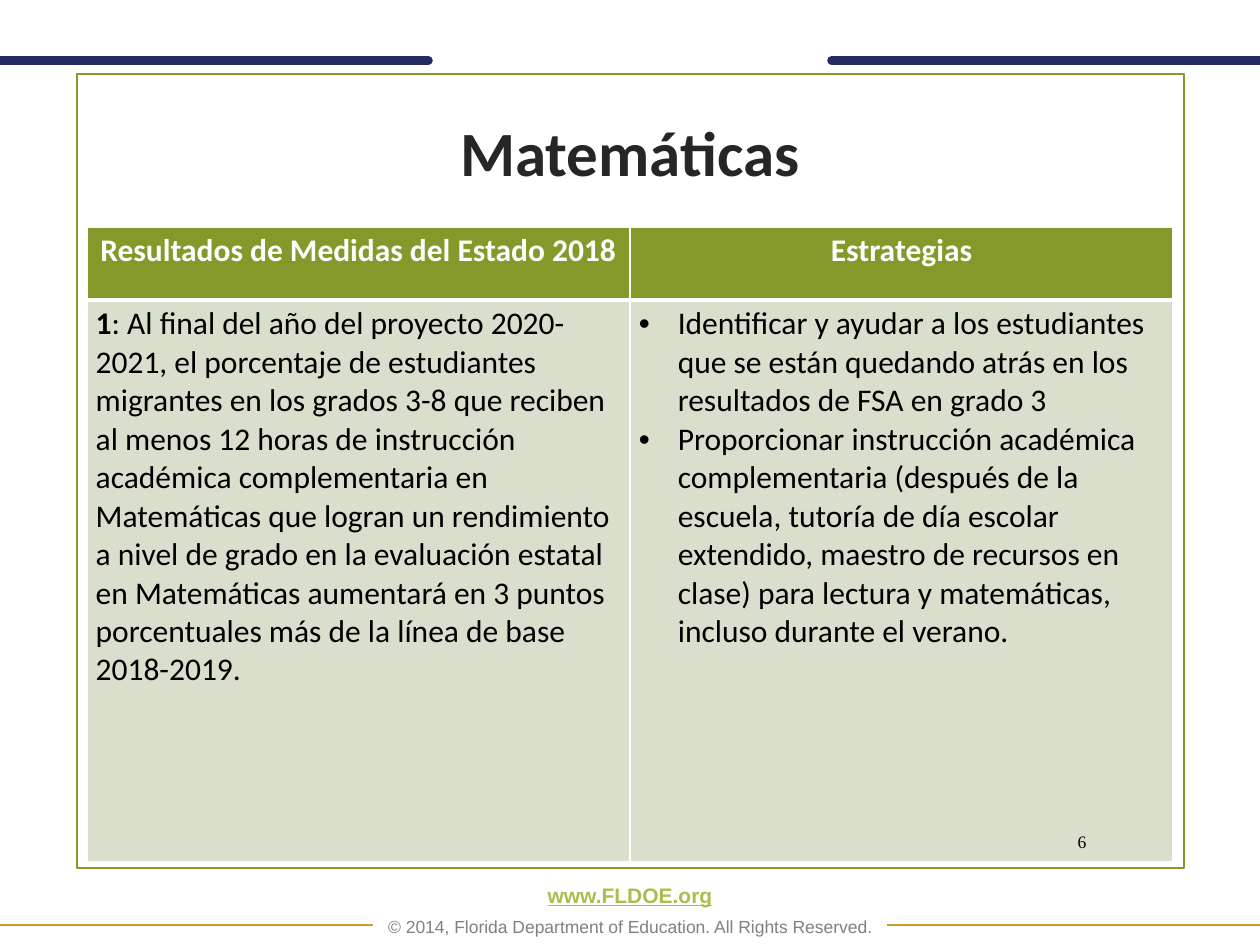
from lxml.etree import SubElement
from pptx import Presentation
from pptx.dml.color import RGBColor
from pptx.enum.shapes import MSO_CONNECTOR, MSO_SHAPE
from pptx.enum.text import MSO_ANCHOR, PP_ALIGN
from pptx.oxml.ns import qn
from pptx.util import Inches, Pt

COLORS = {
    "green": "83992A", "link": "A8BF4D", "pale": "D9DECD", "navy": "262A63",
    "gold": "CD9D2C", "gray": "808080", "dark": "262626",
    "black": "000000", "white": "FFFFFF",
}
LEFT, WIDTH = 0.69, 8.62


def rgb(name):
    return RGBColor.from_string(COLORS[name])


def write(p, text, size=18, font="Calibri", color="black", bold=False,
          underline=False, align=None, before=None, spacing=None, bullet=None):
    """Append a formatted run to paragraph p."""
    if bullet:
        pPr = p._p.get_or_add_pPr()
        pPr.set("marL", str(Inches(0.31)))
        pPr.set("indent", str(-Inches(0.31)))
        SubElement(pPr, qn("a:buFont"), typeface="Arial")
        SubElement(pPr, qn("a:buChar"), char=bullet)
    if align is not None:
        p.alignment = align
    if before is not None:
        p.space_before = Pt(before)
    if spacing is not None:
        p.line_spacing = spacing
    r = p.add_run()
    r.text = text
    r.font.size = Pt(size)
    r.font.name = font
    r.font.bold = bold
    r.font.underline = underline
    r.font.color.rgb = rgb(color)


class Deck:
    def __init__(self):
        self.prs = Presentation()
        self.prs.slide_width, self.prs.slide_height = Inches(10), Inches(7.5)
        self.s = self.prs.slides.add_slide(self.prs.slide_layouts[5])

    def title(self, x, y, w, h, text):
        sp = self.s.shapes.title
        sp.left, sp.top, sp.width, sp.height = map(Inches, (x, y, w, h))
        sp.text_frame.vertical_anchor = MSO_ANCHOR.MIDDLE
        write(sp.text_frame.paragraphs[0], text, size=36, color="dark",
              bold=True, align=PP_ALIGN.CENTER)

    def frame(self, x, y, w, h, color, width):
        sp = self.s.shapes.add_shape(MSO_SHAPE.RECTANGLE, *map(Inches, (x, y, w, h)))
        sp.shadow.inherit = False
        sp.fill.background()
        sp.line.color.rgb = rgb(color)
        sp.line.width = Pt(width)

    def rule(self, x1, x2, y, color, width, cap="flat"):
        """Draw a horizontal line."""
        cn = self.s.shapes.add_connector(
            MSO_CONNECTOR.STRAIGHT, *map(Inches, (x1, y, x2, y)))
        cn.line.color.rgb = rgb(color)
        cn.line.width = Pt(width)
        cn.line._ln.set("cap", cap)
        SubElement(cn._element.spPr, qn("a:effectLst"))

    def text(self, x, y, w, h, anchor):
        """Add a text box and return its text frame."""
        tf = self.s.shapes.add_textbox(*map(Inches, (x, y, w, h))).text_frame
        tf.word_wrap = True
        tf.vertical_anchor = anchor
        return tf

    def table(self, x, y, cols, rows):
        shape = self.s.shapes.add_table(
            len(rows), len(cols), *map(Inches, (x, y, sum(cols), sum(rows))))
        tbl = shape.table
        for col, w in zip(tbl.columns, cols):
            col.width = Inches(w)
        for row, h in zip(tbl.rows, rows):
            row.height = Inches(h)
        return tbl

    def cell(self, cell, fill, top=1, bottom=1):
        """Style a table cell and return its text frame."""
        cell.margin_left = cell.margin_right = Inches(0.07)
        cell.margin_top = cell.margin_bottom = Inches(0.04)
        tcPr = cell._tc.get_or_add_tcPr()
        for side, width in zip("LRTB", (1, 1, top, bottom)):
            ln = SubElement(tcPr, qn(f"a:ln{side}"), w=str(Pt(width)))
            solid = SubElement(ln, qn("a:solidFill"))
            SubElement(solid, qn("a:srgbClr"), val=COLORS["white"])
        cell.fill.solid()
        cell.fill.fore_color.rgb = rgb(fill)
        return cell.text_frame


def main():
    d = Deck()
    d.frame(0.61, 0.59, 8.79, 6.3, "green", 1.25)

    tf = d.text(LEFT, 7.06, WIDTH, 0.43, MSO_ANCHOR.BOTTOM)
    write(tf.paragraphs[0], "www.FLDOE.org", size=12, font="Arial", color="link",
          bold=True, underline=True, align=PP_ALIGN.CENTER, spacing=0.9)
    write(tf.add_paragraph(),
          "© 2014, Florida Department of Education. All Rights Reserved.",
          size=10, font="Arial", color="gray", align=PP_ALIGN.CENTER,
          before=6, spacing=0.9)

    for y, length, color, width, cap in ((7.34, 2.96, "gold", 1, "flat"),
                                         (0.48, 3.4, "navy", 5, "rnd")):
        d.rule(0, length, y, color, width, cap)
        d.rule(10 - length, 10, y, color, width, cap)

    d.title(LEFT, 0.93, WIDTH, 0.55, "Matemáticas")

    tbl = d.table(LEFT, 1.8, [WIDTH / 2] * 2, [0.58, 4.46])
    headers = ("Resultados de Medidas del Estado 2018", "Estrategias")
    for i, header in enumerate(headers):
        tf = d.cell(tbl.cell(0, i), "green", bottom=3)
        write(tf.paragraphs[0], header, color="white", bold=True,
              align=PP_ALIGN.CENTER)

    p = d.cell(tbl.cell(1, 0), "pale", top=3).paragraphs[0]
    write(p, "1", bold=True)
    write(p, ": Al final del año del proyecto 2020-2021, el porcentaje de "
             "estudiantes migrantes en los grados 3-8 que reciben al menos 12 "
             "horas de instrucción académica complementaria en Matemáticas que "
             "logran un rendimiento a nivel de grado en la evaluación estatal en "
             "Matemáticas aumentará en 3 puntos porcentuales más de la línea de "
             "base 2018-2019.")

    strategies = (
        "Identificar y ayudar a los estudiantes que se están quedando atrás en "
        "los resultados de FSA en grado 3",
        "Proporcionar instrucción académica complementaria (después de la "
        "escuela, tutoría de día escolar extendido, maestro de recursos en "
        "clase) para lectura y matemáticas, incluso durante el verano.",
    )
    tf = d.cell(tbl.cell(1, 1), "pale", top=3)
    for i, strategy in enumerate(strategies):
        write(tf.add_paragraph() if i else tf.paragraphs[0], strategy, bullet="•")

    tf = d.text(8.29, 6.52, 0.43, 0.31, MSO_ANCHOR.MIDDLE)
    write(tf.paragraphs[0], "6", size=10, font="Times New Roman",
          align=PP_ALIGN.RIGHT)

    d.prs.save("out.pptx")


if __name__ == "__main__":
    main()
